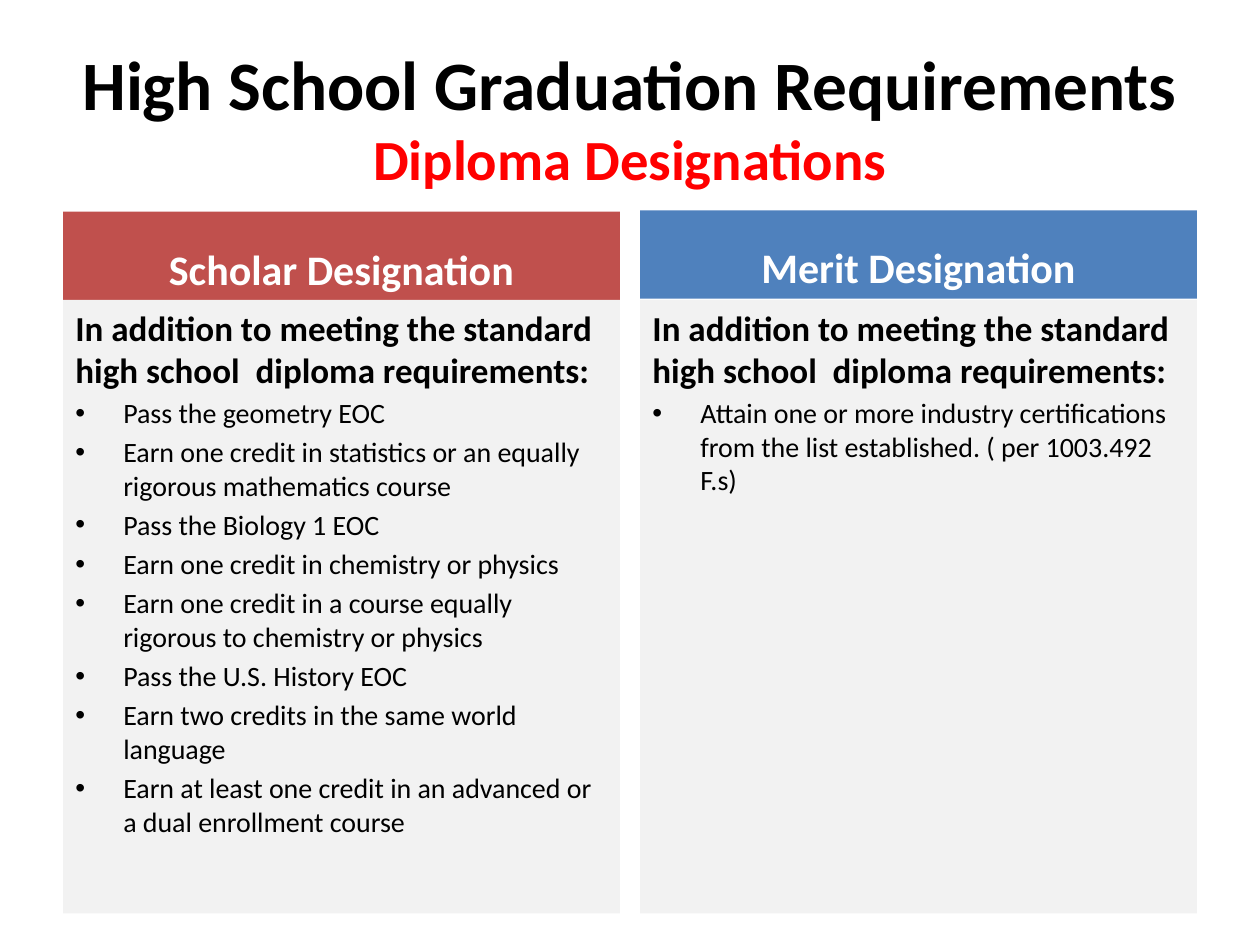
from dataclasses import dataclass

from lxml.etree import SubElement
from pptx import Presentation
from pptx.dml.color import RGBColor as Rgb
from pptx.enum.shapes import MSO_SHAPE as Shape
from pptx.enum.text import MSO_ANCHOR as Anchor, PP_ALIGN as Align
from pptx.oxml.ns import qn
from pptx.util import Inches, Pt

COLORS = {"black": "000000", "white": "FFFFFF", "title": "FF0000",
          "scholar": "C0504D", "merit": "4F81BD", "panel": "F2F2F2"}
INTRO = "In addition to meeting the standard high school  diploma requirements:"
WIDTH = 4.42
HEAD = 0.7
BODY_TOP = 2.38
BODY = 4.87
INDENT = 0.38


@dataclass
class Column:
    name: str
    color: str
    left: float
    top: float
    items: list[str]


COLUMNS = [
    Column("Scholar Designation", "scholar", 0.5, 1.68, [
        "Pass the geometry EOC",
        "Earn one credit in statistics or an equally rigorous mathematics course",
        "Pass the Biology 1 EOC",
        "Earn one credit in chemistry or physics",
        "Earn one credit in a course equally rigorous to chemistry or physics",
        "Pass the U.S. History EOC",
        "Earn two credits in the same world language",
        "Earn at least one credit in an advanced or a dual enrollment course",
    ]),
    Column("Merit Designation", "merit", 5.08, 1.67, [
        "Attain one or more industry certifications from the list established. "
        "( per 1003.492 F.s)",
    ]),
]


def add_run(para, text: str, size: float, color: str, bold: bool = True) -> None:
    run = para.add_run()
    run.text = text
    style = {"name": "Calibri", "size": Pt(size), "bold": bold}
    for key, value in style.items():
        setattr(run.font, key, value)
    run.font.color.rgb = Rgb.from_string(COLORS[color])


def add_rect(slide, left: float, top: float, height: float, color: str,
             anchor: Anchor):
    """Add a borderless column block and return its text frame."""
    rect = slide.shapes.add_shape(Shape.RECTANGLE, Inches(left), Inches(top),
                                  Inches(WIDTH), Inches(height))
    rect.shadow.inherit = False
    rect.fill.solid()
    rect.fill.fore_color.rgb = Rgb.from_string(COLORS[color])
    rect.line.fill.background()
    frame = rect.text_frame
    frame.word_wrap = True
    frame.vertical_anchor = anchor
    return frame


def add_bullet(frame, text: str) -> None:
    para = frame.add_paragraph()
    props = para._p.get_or_add_pPr()
    props.set("marL", str(Inches(INDENT)))
    props.set("indent", str(-Inches(INDENT)))
    SubElement(props, qn("a:buFont"), typeface="Arial")
    SubElement(props, qn("a:buChar"), char="•")
    para.alignment = Align.LEFT
    para.space_before = Pt(3.2)
    add_run(para, text, 16, "black", False)


def add_title(slide) -> None:
    box = slide.shapes.add_textbox(Inches(0.5), Inches(0.3), Inches(9), Inches(1.25))
    frame = box.text_frame
    frame.word_wrap = True
    frame.vertical_anchor = Anchor.MIDDLE
    para = frame.paragraphs[0]
    para.alignment = Align.CENTER
    add_run(para, "High School Graduation Requirements", 39.6, "black")
    para.add_line_break()
    add_run(para, "Diploma Designations", 32.4, "title")


def add_column(slide, col: Column) -> None:
    head = add_rect(slide, col.left, col.top, HEAD, col.color, Anchor.BOTTOM)
    head.paragraphs[0].alignment = Align.CENTER
    add_run(head.paragraphs[0], col.name, 24, "white")

    body = add_rect(slide, col.left, BODY_TOP, BODY, "panel", Anchor.TOP)
    body.paragraphs[0].alignment = Align.LEFT
    add_run(body.paragraphs[0], INTRO, 20, "black")
    for item in col.items:
        add_bullet(body, item)


def main() -> None:
    deck = Presentation()
    deck.slide_width, deck.slide_height = Inches(10), Inches(7.5)
    slide = deck.slides.add_slide(deck.slide_layouts[6])
    add_title(slide)
    for col in COLUMNS:
        add_column(slide, col)
    deck.save("out.pptx")


if __name__ == "__main__":
    main()
